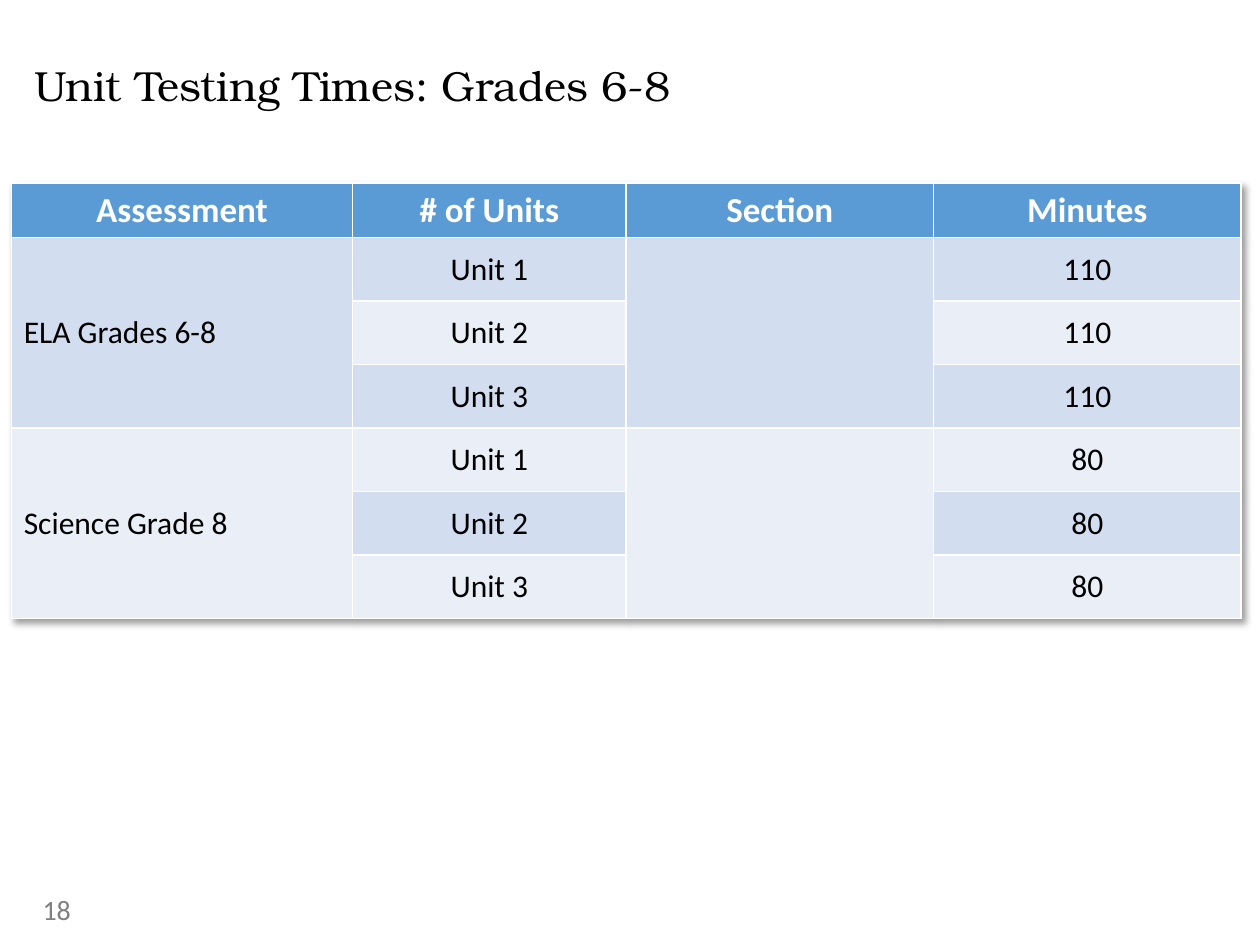
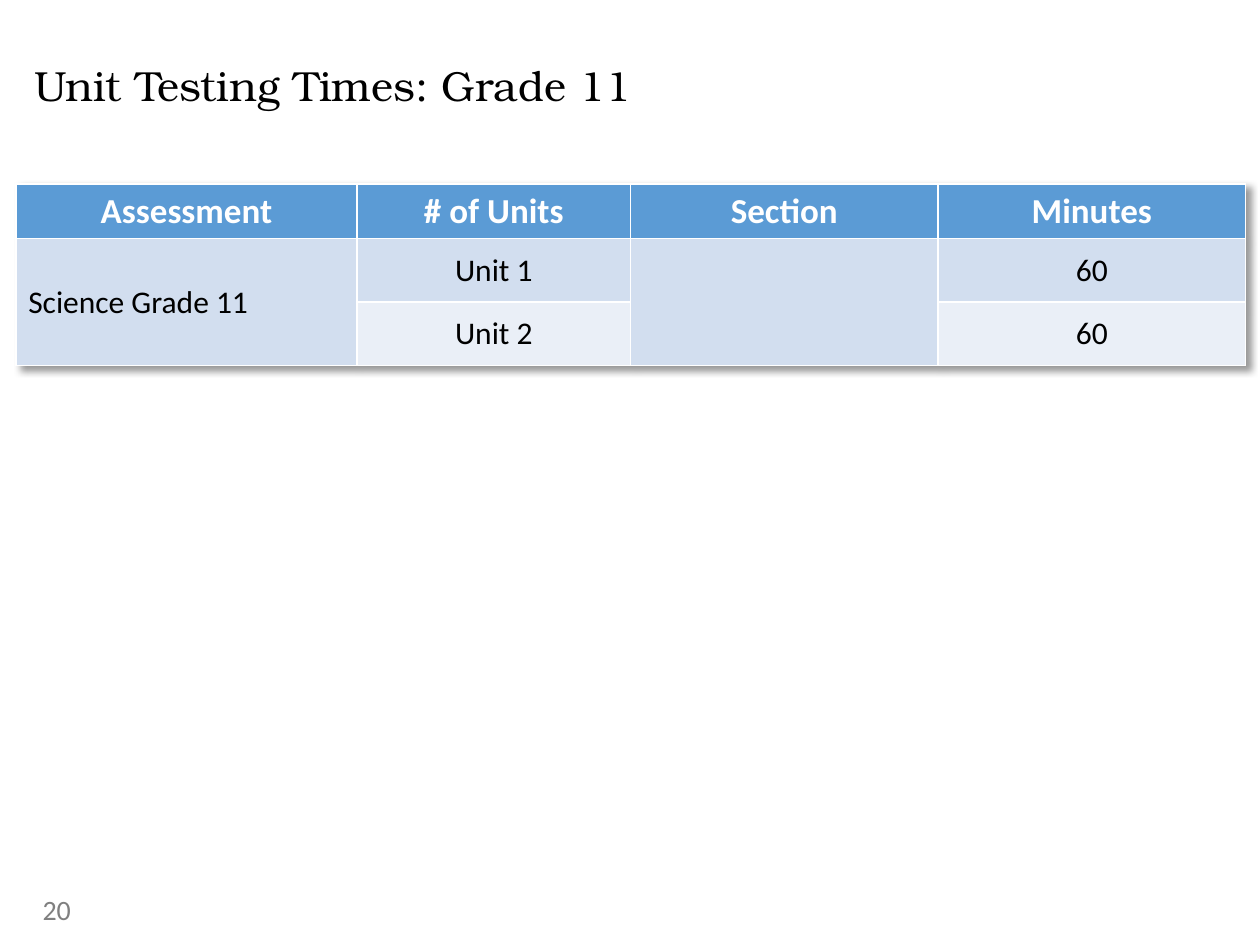
"""Build two slides of unit testing times by grade."""
import lxml.etree
import pptx
import pptx.dml.color
import pptx.enum.text
import pptx.oxml
import pptx.oxml.ns
import pptx.util

Cm = pptx.util.Cm
Pt = pptx.util.Pt
RGBColor = pptx.dml.color.RGBColor
ALIGN = pptx.enum.text.PP_ALIGN
MIDDLE = pptx.enum.text.MSO_ANCHOR.MIDDLE

BLACK = RGBColor(0x00, 0x00, 0x00)
WHITE = RGBColor(0xFF, 0xFF, 0xFF)
GREY = RGBColor(0x80, 0x80, 0x80)
HEADER_BLUE = RGBColor(0x5B, 0x9B, 0xD5)
BANDS = [RGBColor(0xD2, 0xDE, 0xEF), RGBColor(0xEA, 0xEF, 0xF7)]

TITLE_FONT = "TeX Gyre Bonum"
BODY_FONT = "Calibri"
HEADINGS = ["Assessment", "# of Units", "Section", "Minutes"]
COLUMN_WIDTHS = [6.88, 5.51, 6.2, 6.2]
HEADER_HEIGHT = 1.1
ROW_HEIGHT = 1.28
MERGED_COLUMNS = [0, 2]
TABLE_SHADOW = (
    f'<a:effectLst {pptx.oxml.ns.nsdecls("a")}>'
    '<a:outerShdw blurRad="50800" dist="38100" dir="2700000" algn="tl" rotWithShape="0">'
    '<a:srgbClr val="000000"><a:alpha val="40000"/></a:srgbClr>'
    '</a:outerShdw></a:effectLst>'
)

SLIDES = [
    {
        "title": "Unit Testing Times: Grades 6-8",
        "number": "18",
        "corner": (0.23, 3.69),
        "assessments": [("ELA Grades 6-8", 3, "110"), ("Science Grade 8", 3, "80")],
    },
    {
        "title": "Unit Testing Times: Grade 11",
        "number": "20",
        "corner": (0.32, 3.71),
        "assessments": [("Science Grade 11", 2, "60")],
    },
]


def write(frame, text, font, size, color, align=ALIGN.LEFT, bold=False):
    frame.text = text
    para = frame.paragraphs[0]
    para.alignment = align
    para.font.name = font
    para.font.size = Pt(size)
    para.font.bold = bold
    para.font.color.rgb = color


def fill_cell(cell, text, color, is_header=False, align=ALIGN.CENTER):
    cell.fill.solid()
    cell.fill.fore_color.rgb = color
    cell.vertical_anchor = MIDDLE
    if is_header:
        write(cell.text_frame, text, BODY_FONT, 20, WHITE, align, True)
    else:
        cell.margin_left = cell.margin_right = Cm(0.25)
        cell.margin_top = cell.margin_bottom = Cm(0.25)
        write(cell.text_frame, text, BODY_FONT, 18, BLACK, align)


deck = pptx.Presentation()
deck.slide_width = Cm(25.4)
deck.slide_height = Cm(19.05)

for content in SLIDES:
    page = deck.slides.add_slide(deck.slide_layouts[6])

    title_frame = page.shapes.add_textbox(Cm(0.69), Cm(0.71), Cm(16.89), Cm(2.11)).text_frame
    title_frame.word_wrap = True
    title_frame.vertical_anchor = MIDDLE
    title_frame.margin_left = title_frame.margin_right = 0
    title_frame.margin_top = title_frame.margin_bottom = 0
    write(title_frame, content["title"], TITLE_FONT, 24, BLACK)
    title_frame.paragraphs[0].line_spacing = 0.9

    number_frame = page.shapes.add_textbox(Cm(0.61), Cm(17.86), Cm(5.72), Cm(1.02)).text_frame
    number_frame.word_wrap = True
    write(number_frame, content["number"], BODY_FONT, 16, GREY)

    unit_count = sum(units for name, units, minutes in content["assessments"])
    left, top = content["corner"]
    table = page.shapes.add_table(
        unit_count + 1, len(HEADINGS), Cm(left), Cm(top),
        Cm(sum(COLUMN_WIDTHS)), Cm(HEADER_HEIGHT + unit_count * ROW_HEIGHT),
    ).table
    table_properties = table._tbl.tblPr
    table_properties.insert(0, pptx.oxml.parse_xml(TABLE_SHADOW))
    for column, width in zip(table.columns, COLUMN_WIDTHS):
        column.width = Cm(width)
    for index, row in enumerate(table.rows):
        row.height = Cm(ROW_HEIGHT if index else HEADER_HEIGHT)
    for index, heading in enumerate(HEADINGS):
        fill_cell(table.cell(0, index), heading, HEADER_BLUE, is_header=True)

    first_row = 1
    for name, units, minutes in content["assessments"]:
        for unit in range(units):
            row_index = first_row + unit
            band = BANDS[(row_index - 1) % 2]
            fill_cell(table.cell(row_index, 0), "" if unit else name, band, align=ALIGN.LEFT)
            fill_cell(table.cell(row_index, 1), f"Unit {unit + 1}", band)
            fill_cell(table.cell(row_index, 2), "", band)
            fill_cell(table.cell(row_index, 3), minutes, band)
        for index in MERGED_COLUMNS:
            table.cell(first_row, index).merge(table.cell(first_row + units - 1, index))
        first_row += units

deck.save("out.pptx")
